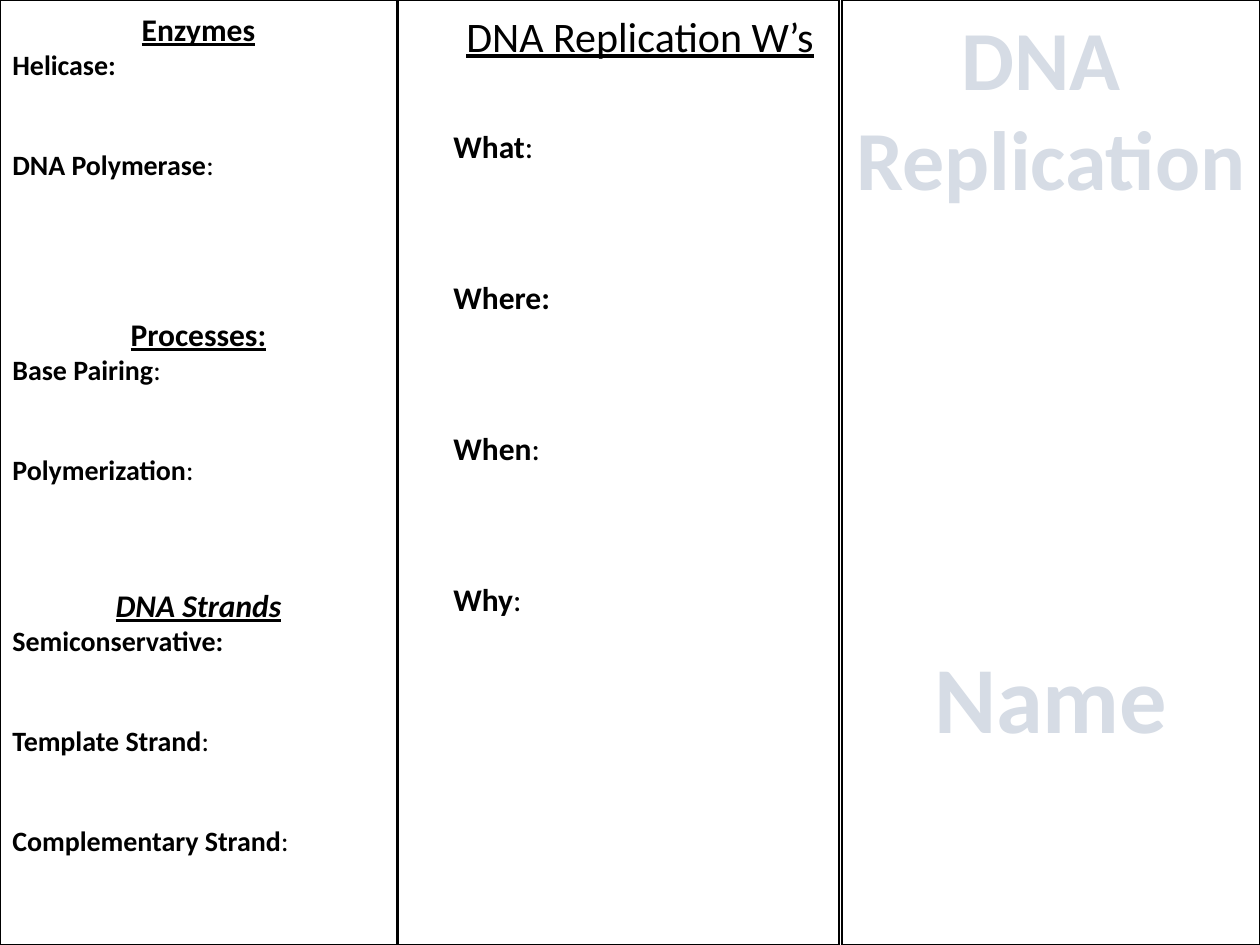
from lxml.etree import SubElement
from pptx import Presentation
from pptx.dml.color import RGBColor
from pptx.enum.dml import MSO_PATTERN as Pattern
from pptx.enum.shapes import MSO_SHAPE as Shape
from pptx.enum.text import PP_ALIGN as Align
from pptx.oxml.ns import qn
from pptx.util import Pt

HEADING = {"size": Pt(18), "bold": True, "underline": True}
TERM = {"size": Pt(16), "bold": True}
QUESTION = {"size": Pt(18), "bold": True}
ENZYME_ROWS = [
    ("Enzymes", "", HEADING, 0),
    ("Helicase:", "", TERM, 38),
    ("DNA Polymerase", ":", TERM, 76),
    ("Processes:", "", HEADING, 0),
    ("Base Pairing", ":", TERM, 38),
    ("Polymerization", ":", TERM, 57),
    ("DNA Strands", "", {**HEADING, "italic": True}, 0),
    ("Semiconservative:", "", TERM, 38),
    ("Template Strand", ":", TERM, 38),
    ("Complementary Strand", ":", TERM, 0),
]
QUESTION_ROWS = [
    ("DNA Replication W’s", "", {"size": Pt(24), "underline": True}, 38),
    ("What", ":", QUESTION, 64.7),
    ("Where:", "", QUESTION, 64.7),
    ("When", ":", QUESTION, 64.7),
    ("Why", ":", QUESTION, 0),
]


def color(value):
    return RGBColor.from_string(value)


def add_panel(slide, left, top, width, height):
    shape = slide.shapes.add_shape(Shape.RECTANGLE, Pt(left), Pt(top), Pt(width), Pt(height))
    shape.shadow.inherit = False
    shape.fill.solid()
    shape.fill.fore_color.rgb = color("FFFFFF")
    shape.line.color.rgb = color("000000")
    shape.line.width = Pt(1)


def add_run(paragraph, text, formats):
    run = paragraph.add_run()
    run.text = text
    for name, value in {"name": "Calibri", **formats}.items():
        setattr(run.font, name, value)
    return run


def add_text_frame(slide, left, top, width, height, wrap=True):
    box = slide.shapes.add_textbox(Pt(left), Pt(top), Pt(width), Pt(height))
    box.text_frame.word_wrap = wrap
    return box.text_frame


def add_paragraphs(frame, count):
    return [frame.paragraphs[0]] + [frame.add_paragraph() for _ in range(count - 1)]


def add_notes_column(slide, rows, left, top, width, height):
    frame = add_text_frame(slide, left, top, width, height)
    for paragraph, (label, suffix, formats, gap) in zip(add_paragraphs(frame, len(rows)), rows):
        paragraph.alignment = Align.CENTER if "underline" in formats else Align.LEFT
        paragraph.space_after = Pt(gap)
        runs = [add_run(paragraph, label, formats)]
        if suffix:
            runs.append(add_run(paragraph, suffix, {**formats, "bold": False}))
        for run in runs:
            run.font.color.rgb = color("000000")


def add_cover_text(slide, lines, size, left, top, width, height, wrap=True):
    frame = add_text_frame(slide, left, top, width, height, wrap)
    for paragraph, line in zip(add_paragraphs(frame, len(lines)), lines):
        paragraph.alignment = Align.CENTER
        run = add_run(paragraph, line, {"size": Pt(size), "bold": True})
        properties = run.font._element
        outline = SubElement(properties, qn("a:ln"), w=str(Pt(1)))
        outline_fill = SubElement(outline, qn("a:solidFill"))
        SubElement(outline_fill, qn("a:srgbClr"), val="333F50")
        properties.insert(0, outline)
        fill = run.font.fill
        fill.patterned()
        fill.pattern = Pattern.DARK_UPWARD_DIAGONAL
        fill.fore_color.rgb = color("44546A")
        fill.back_color.rgb = color("D6DCE5")


def add_cover(slide, left, top, width, height):
    add_panel(slide, left, top, width, height)
    add_cover_text(slide, ["DNA ", "Replication"], 48, left, top, width, 124)
    name_width = 149
    name_left = left + (width - name_width) / 2
    add_cover_text(slide, ["Name"], 54, name_left, top + 361.5, name_width, 73, wrap=False)


def add_questions(slide, left, top, width, height):
    add_panel(slide, left, top, width, height)
    indent = 24.5
    add_notes_column(slide, QUESTION_ROWS, left + indent, top + 2.2, width - indent, 424)


def add_enzymes(slide, left, top, width, height):
    add_panel(slide, left, top, width, height)
    add_notes_column(slide, ENZYME_ROWS, left, top + 2.2, width, 521)


def main():
    presentation = Presentation()
    presentation.slide_width, presentation.slide_height = Pt(720), Pt(540)
    slide = presentation.slides.add_slide(presentation.slide_layouts[6])
    add_cover(slide, 481, 0, 239, 540)
    add_questions(slide, 227.5, 0, 252, 540)
    add_enzymes(slide, 0, 0, 226.8, 540)
    presentation.save("out.pptx")


if __name__ == "__main__":
    main()
